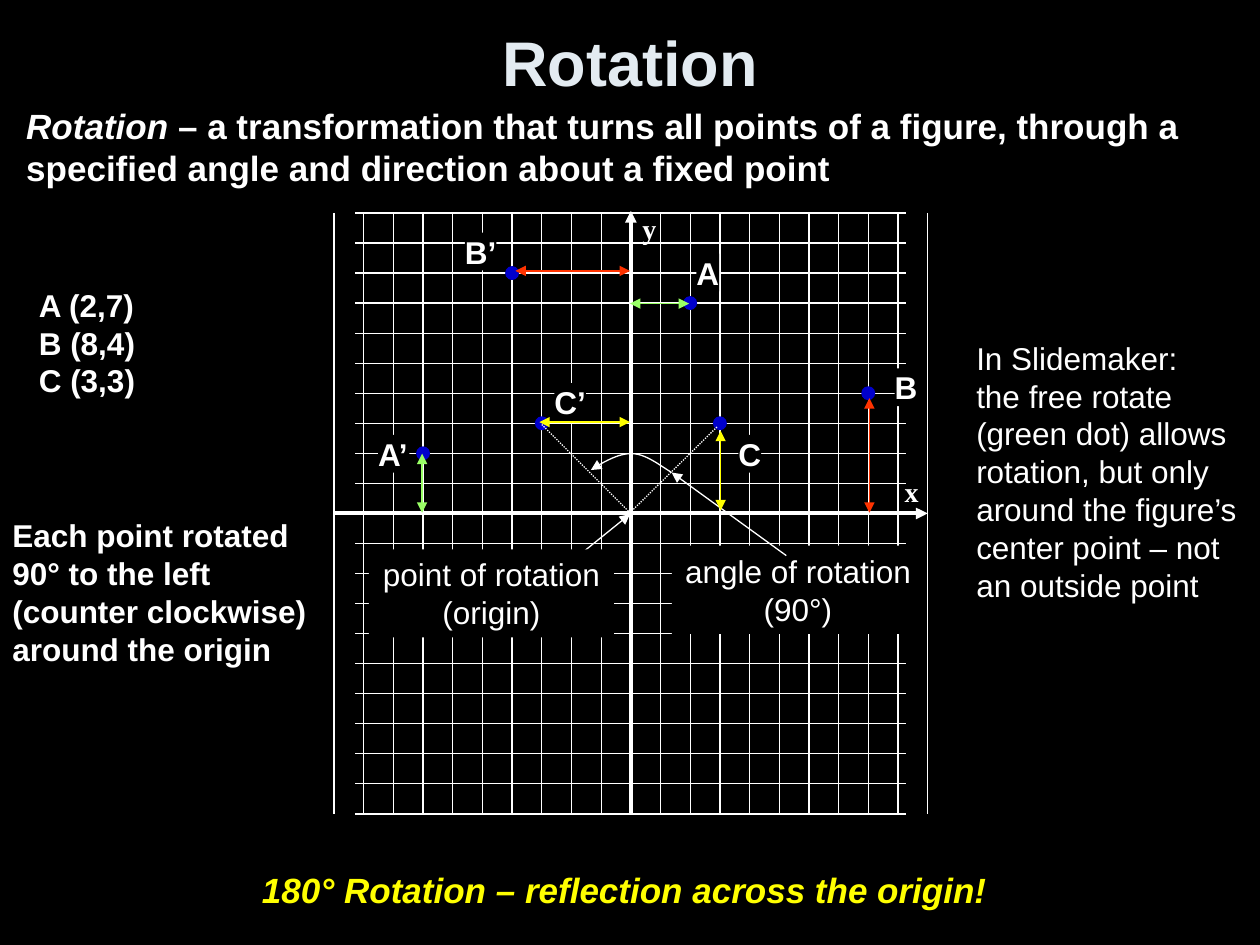
from lxml.etree import SubElement
from pptx import Presentation
from pptx.dml.color import RGBColor
from pptx.enum.dml import MSO_LINE
from pptx.enum.shapes import MSO_CONNECTOR, MSO_SHAPE
from pptx.enum.text import MSO_ANCHOR, MSO_AUTO_SIZE, PP_ALIGN
from pptx.oxml.ns import qn
from pptx.util import Pt

paint = RGBColor.from_string
WHITE, BLACK, BLUE = "FFFFFF", "000000", "0000CC"
RED, GREEN, YELLOW = "FF3300", "99FF66", "FFFF00"
ORIGIN_X, ORIGIN_Y = 360.5, 293.4
STEP_X, STEP_Y = 16.96, 17.17
LEFT, RIGHT = ORIGIN_X - 10 * STEP_X, ORIGIN_X + 10 * STEP_X
TOP, BOTTOM = ORIGIN_Y - 10 * STEP_Y, ORIGIN_Y + 10 * STEP_Y

presentation = Presentation()
presentation.slide_width, presentation.slide_height = Pt(720), Pt(540)
slide = presentation.slides.add_slide(presentation.slide_layouts[5])
slide.background.fill.solid()
slide.background.fill.fore_color.rgb = paint(BLACK)
shapes = slide.shapes


def write(shape, text, lead="", size=18, font="Arial", color=WHITE, bold=False, italic=False,
          align=PP_ALIGN.LEFT, anchor=MSO_ANCHOR.TOP, wrap=False, grow=True, margin=None, fill=None):
    frame = shape.text_frame
    frame.word_wrap = wrap
    frame.vertical_anchor = anchor
    frame.auto_size = MSO_AUTO_SIZE.SHAPE_TO_FIT_TEXT if grow else MSO_AUTO_SIZE.NONE
    if margin is not None:
        frame.margin_left = frame.margin_right = frame.margin_top = frame.margin_bottom = Pt(margin)
    if fill:
        shape.shadow.inherit = False
        shape.fill.solid()
        shape.fill.fore_color.rgb = paint(fill)
        shape.line.fill.background()
    for index, line in enumerate(text.split("\n")):
        paragraph = frame.add_paragraph() if index else frame.paragraphs[0]
        paragraph.alignment = align
        if lead:
            paragraph.add_run().text = lead
            paragraph.add_run().text = line
        else:
            paragraph.text = line
        for number, run in enumerate(paragraph.runs):
            run.font.name, run.font.size, run.font.bold = font, Pt(size), bold
            run.font.italic = italic or bool(lead and number == 0)
            run.font.color.rgb = paint(color)


def draw_line(points, color=WHITE, width=0.75, head=False, tail=False, dash=None):
    points = [(Pt(x), Pt(y)) for x, y in points]
    if len(points) == 2:
        line = shapes.add_connector(MSO_CONNECTOR.STRAIGHT, *points[0], *points[1])
    else:
        builder = shapes.build_freeform(*points[0])
        builder.add_line_segments(points[1:], close=False)
        line = builder.convert_to_shape()
        line.fill.background()
    line.line.color.rgb = paint(color)
    line.line.width = Pt(width)
    if dash:
        line.line.dash_style = dash
    properties = line._element.spPr
    for wanted, tag in ((head, "a:headEnd"), (tail, "a:tailEnd")):
        if wanted:
            SubElement(properties.find(qn("a:ln")), qn(tag), type="triangle")
    SubElement(properties, qn("a:effectLst"))


title = shapes.title
title.left, title.top, title.width, title.height = Pt(36), Pt(16), Pt(648), Pt(38)
write(title, "Rotation", size=36, color="E3EBF1", bold=True, align=PP_ALIGN.CENTER,
      anchor=MSO_ANCHOR.MIDDLE, wrap=True, grow=False)

for step in range(21):
    x, y = LEFT + step * STEP_X, TOP + step * STEP_Y
    draw_line([(203, y), (517.5, y)])
    draw_line([(x, TOP), (x, BOTTOM)])
draw_line([(ORIGIN_X, BOTTOM), (ORIGIN_X, 120.5)], width=2.25, tail=True)
draw_line([(LEFT, ORIGIN_Y), (RIGHT, ORIGIN_Y)], width=2.25, tail=True)

vertices = [
    ("A", 2, 7, 398, 145), ("B", 8, 4, 511.2, 210.5), ("C", 3, 3, 422, 248.5),
    ("A’", -7, 2, 216, 248.5), ("B’", -4, 8, 265.7, 133), ("C’", -3, 3, 316.8, 219),
]
for name, column, row, left, top in vertices:
    x, y = ORIGIN_X + column * STEP_X, ORIGIN_Y - row * STEP_Y
    dot = shapes.add_shape(MSO_SHAPE.OVAL, Pt(x - 3.6), Pt(y - 3.6), Pt(7.2), Pt(7.2))
    dot.shadow.inherit = False
    dot.fill.solid()
    dot.fill.fore_color.rgb = dot.line.color.rgb = paint(BLUE)
    dot.line.width = Pt(0.75)
    label = shapes.add_shape(MSO_SHAPE.RECTANGLE, Pt(left), Pt(top), Pt(13 if len(name) == 1 else 18), Pt(21.6))
    write(label, name, bold=True, anchor=MSO_ANCHOR.MIDDLE, margin=0, fill=BLACK)

draw_line([(329.8, 318.2), (360, 293.8)], tail=True)
for end in ((409.7, 244), (309.6, 242.6)):
    draw_line([end, (360, 293)], dash=MSO_LINE.ROUND_DOT)

arc = [(383.8, 270)]
curves = [
    ((383.8, 270), (375.8, 265), (368.6, 259.2), (360.7, 259.2)),
    ((360.7, 259.2), (353.5, 259.2), (345.6, 263.5), (337.7, 268.6)),
]
for curve in curves:
    for step in range(1, 13):
        t = step / 12
        weights = ((1 - t) ** 3, 3 * t * (1 - t) ** 2, 3 * t ** 2 * (1 - t), t ** 3)
        arc.append(tuple(sum(w * point[axis] for w, point in zip(weights, curve)) for axis in (0, 1)))
draw_line(arc, tail=True)

for text, left, top, width in (
    ("angle of rotation\v(90°)", 384, 311.8, 144),
    ("point of rotation\v(origin)", 210.8, 313.9, 140),
):
    callout = shapes.add_shape(MSO_SHAPE.RECTANGLE, Pt(left), Pt(top), Pt(width), Pt(50.4))
    write(callout, text, align=PP_ALIGN.CENTER, fill=BLACK)
draw_line([(449.3, 317.5), (383.8, 270)], tail=True)

distances = [
    (RED, (496.8, 293), (496.8, 227.5)), (RED, (360, 154.8), (294.5, 154.8)),
    (GREEN, (393.8, 173.5), (360, 173.5)), (GREEN, (241.2, 259.2), (241.2, 293)),
    (YELLOW, (411.8, 291.6), (411.8, 246.2)), (YELLOW, (360, 241.2), (308.2, 241.2)),
]
for color, start, end in distances:
    draw_line([start, end], color=color, head=True, tail=True)

axis_name = dict(size=16, font="Times New Roman", bold=True)
notes = [
    ((7.9, 56.2, 702.7, 55.4),
     " – a transformation that turns all points of a figure, through a specified angle and direction about a fixed point",
     dict(lead="Rotation", size=20, bold=True, wrap=True)),
    ((360, 117.4, 22.3, 26.6), "y", axis_name),
    ((509.8, 267.5, 22.3, 26.6), "x", axis_name),
    ((0, 291.6, 182.2, 93.6),
     "Each point rotated\v90° to the left\n(counter clockwise)\naround the origin", dict(bold=True)),
    ((550.8, 190.1, 163.4, 158.4),
     "In Slidemaker:\vthe free rotate\v(green dot) allows\vrotation, but only\v"
     "around the figure’s\vcenter point – not\van outside point", {}),
    ((142.6, 492.5, 435.6, 31), "180° Rotation – reflection across the origin!",
     dict(size=20, color=YELLOW, bold=True, italic=True, wrap=True)),
    ((15.1, 159.8, 69.8, 72), "A (2,7)\nB (8,4)\nC (3,3)", dict(bold=True)),
]
for box, text, style in notes:
    write(shapes.add_textbox(*map(Pt, box)), text, **style)

presentation.save("out.pptx")
